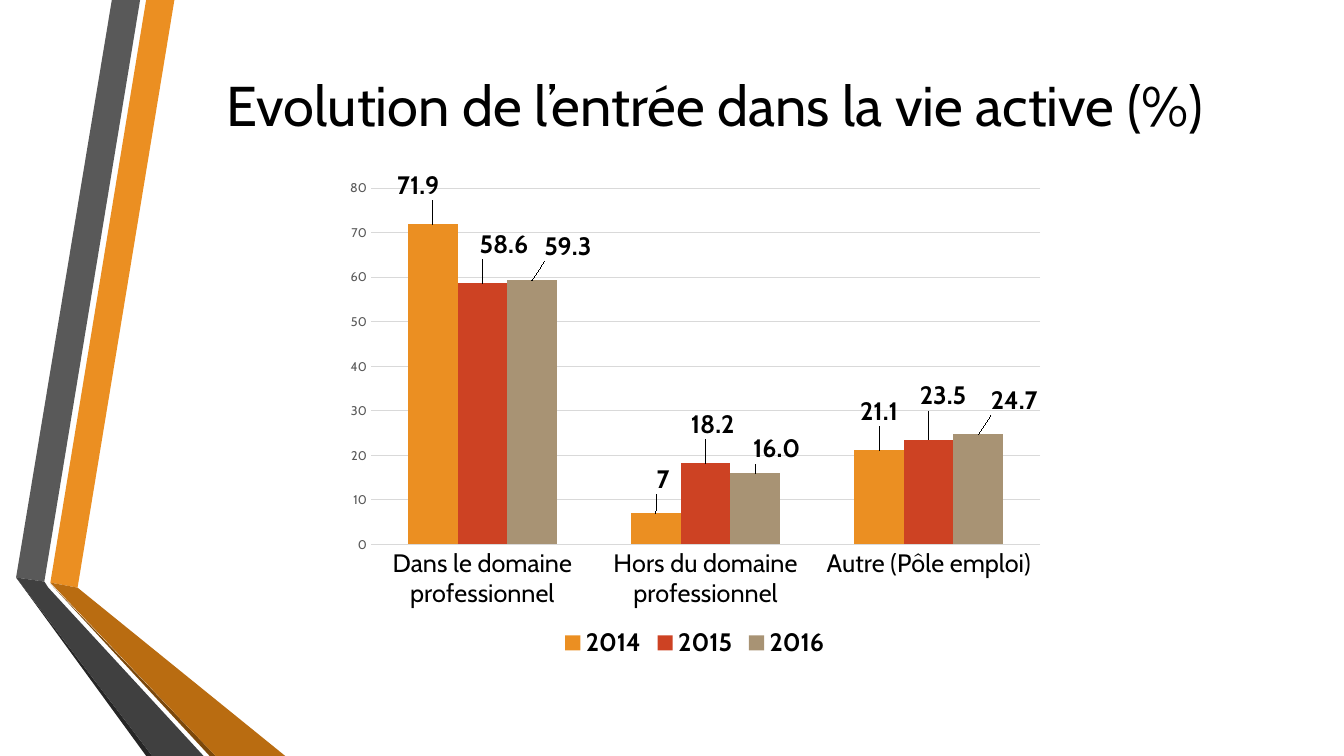
import dataclasses

import lxml.etree
import pptx
import pptx.chart.data
import pptx.dml.color
import pptx.enum.chart
import pptx.enum.text
import pptx.oxml.ns
import pptx.util


@dataclasses.dataclass(frozen=True)
class Theme:
    """Colours, type sizes and grid cell of the slide."""
    font: str = "Cabin"
    ink: str = "000000"
    axis_ink: str = "595959"
    gridline: str = "D9D9D9"
    orange: str = "EB8F22"
    orange_dark: str = "B96C11"
    orange_edge: str = "7B480B"
    grey: str = "595959"
    grey_dark: str = "404040"
    grey_edge: str = "262626"
    series: tuple = ("EB8F22", "CD4223", "A89374")
    title_size: int = 40
    label_size: int = 18
    axis_size: int = 9
    base_size: int = 10
    cell: float = 1.0


THEME = Theme()

RIBBONS = [
    (THEME.orange, [(0.5, 5.78), (0.77, 5.83), (1.73, 0), (1.45, 0)]),
    (THEME.grey, [(1.39, 0), (1.11, 0), (0.16, 5.73), (0.44, 5.77)]),
    (THEME.grey_edge, [(0.16, 5.73), (1.45, 7.5), (1.51, 7.5)]),
    (THEME.orange_edge, [(0.5, 5.79), (2.08, 7.5), (2.14, 7.5)]),
    (THEME.orange_dark, [(0.5, 5.78), (2.14, 7.5), (2.83, 7.5), (0.77, 5.83)]),
    (THEME.grey_dark, [(2.02, 7.5), (0.48, 5.83), (0.44, 5.77), (0.16, 5.73), (1.51, 7.5)]),
]

CATEGORIES = ["Dans le domaine professionnel", "Hors du domaine professionnel", "Autre (Pôle emploi)"]
ENTRY_RATES = {
    "2014": ("General", [71.9, 7, 21.1]),
    "2015": ("General", [58.6, 18.2, 23.5]),
    "2016": ("0.0", [59.3, 16, 24.7]),
}
LABEL_SHIFTS = [
    (-0.02, -0.04), (0.01, -0.03), (0, -0.04),
    (0.03, -0.04), (0.01, -0.04), (0.02, -0.05),
    (0.05, -0.03), (0.03, -0.01), (0.05, -0.03),
]
PLOT_AREA = {"x": 0.05, "y": 0.04, "w": 0.93, "h": 0.72}


class Page:
    """Draws themed elements on one slide, placed by columns and rows."""

    def __init__(self, deck, theme):
        self.theme = theme
        self.shapes = deck.slides.add_slide(deck.slide_layouts[6]).shapes

    def span(self, cells):
        return pptx.util.Inches(cells * self.theme.cell)

    def place(self, column, row, columns, rows):
        return [self.span(cells) for cells in (column, row, columns, rows)]

    def color(self, value):
        return pptx.dml.color.RGBColor.from_string(value)

    def style(self, font, size, color, bold=False):
        font.name = self.theme.font
        font.size = pptx.util.Pt(size)
        font.bold = bold
        font.color.rgb = self.color(color)

    def ribbon(self, color, corners):
        points = [(self.span(column), self.span(row)) for column, row in corners]
        builder = self.shapes.build_freeform(*points[0])
        builder.add_line_segments(points[1:], close=True)
        shape = builder.convert_to_shape()
        shape.shadow.inherit = False
        shape.fill.solid()
        shape.fill.fore_color.rgb = self.color(color)
        shape.line.fill.background()

    def title(self, text, *area):
        frame = self.shapes.add_textbox(*self.place(*area)).text_frame
        frame.word_wrap = True
        frame.vertical_anchor = pptx.enum.text.MSO_ANCHOR.MIDDLE
        frame.text = text
        paragraph = frame.paragraphs[0]
        paragraph.alignment = pptx.enum.text.PP_ALIGN.CENTER
        self.style(paragraph.runs[0].font, self.theme.title_size, self.theme.ink)

    def layout(self, settings):
        tag = pptx.oxml.ns.qn
        layout = lxml.etree.Element(tag("c:layout"))
        manual = lxml.etree.SubElement(layout, tag("c:manualLayout"))
        for name, value in settings.items():
            lxml.etree.SubElement(manual, tag(f"c:{name}")).set("val", str(value))
        return layout

    def column_chart(self, categories, table, *area):
        data = pptx.chart.data.CategoryChartData()
        data.categories = categories
        for name, (number_format, values) in table.items():
            data.add_series(name, values, number_format)
        kind = pptx.enum.chart.XL_CHART_TYPE.COLUMN_CLUSTERED
        chart = self.shapes.add_chart(kind, *self.place(*area), data).chart
        self.style(chart.font, self.theme.base_size, self.theme.ink)
        chart.has_title = False
        self.axes(chart)
        self.legend(chart)
        plot = chart.plots[0]
        plot.gap_width = 150
        plot.overlap = 0
        plot.vary_by_categories = False
        for series, color in zip(plot.series, self.theme.series):
            series.format.fill.solid()
            series.format.fill.fore_color.rgb = self.color(color)
            self.value_labels(series, table[series.name][0])
        return chart

    def axes(self, chart):
        none = pptx.enum.chart.XL_TICK_MARK.NONE
        sides = (
            (chart.category_axis, self.theme.label_size, self.theme.ink),
            (chart.value_axis, self.theme.axis_size, self.theme.axis_ink),
        )
        for axis, size, color in sides:
            axis.major_tick_mark = axis.minor_tick_mark = none
            axis.format.line.fill.background()
            self.style(axis.tick_labels.font, size, color)
        axis = chart.value_axis
        axis.minimum_scale, axis.maximum_scale, axis.major_unit = 0, 80, 10
        line = axis.major_gridlines.format.line
        line.width = pptx.util.Pt(0.75)
        line.color.rgb = self.color(self.theme.gridline)

    def legend(self, chart):
        chart.has_legend = True
        chart.legend.position = pptx.enum.chart.XL_LEGEND_POSITION.BOTTOM
        chart.legend.include_in_layout = False
        self.style(chart.legend.font, self.theme.label_size, self.theme.ink, True)

    def value_labels(self, series, number_format):
        outside = pptx.enum.chart.XL_LABEL_POSITION.OUTSIDE_END
        labels = series.data_labels
        labels.show_value = True
        labels.number_format = number_format
        labels.number_format_is_linked = False
        labels.position = outside
        self.style(labels.font, self.theme.label_size, self.theme.ink, True)
        for index in range(len(series.values)):
            label = series.points[index].data_label
            label.position = outside
            self.style(label.font, self.theme.label_size, self.theme.ink, True)

    def arrange(self, chart, plot_area, shifts):
        area = chart.element.xpath(".//c:plotArea")[0]
        for layout in area.xpath("./c:layout"):
            area.remove(layout)
        modes = {"layoutTarget": "inner", "xMode": "edge", "yMode": "edge"}
        area.insert(0, self.layout({**modes, **plot_area}))
        for label, (across, down) in zip(area.xpath(".//c:dLbl"), shifts):
            label.insert(1, self.layout({"x": across, "y": down}))
            number_format = label.getparent().xpath("./c:numFmt")[0]
            copied = lxml.etree.Element(number_format.tag, dict(number_format.attrib))
            label.insert(2, copied)


def main():
    deck = pptx.Presentation()
    deck.slide_width = pptx.util.Inches(13.33)
    deck.slide_height = pptx.util.Inches(7.5)
    page = Page(deck, THEME)
    for color, corners in RIBBONS:
        page.ribbon(color, corners)
    page.title("Evolution de l’entrée dans la vie active (%)", 1.61, 0.4, 10.96, 1.27)
    chart = page.column_chart(CATEGORIES, ENTRY_RATES, 3.32, 1.67, 7.14, 4.91)
    page.arrange(chart, PLOT_AREA, LABEL_SHIFTS)
    deck.save("out.pptx")


if __name__ == "__main__":
    main()
